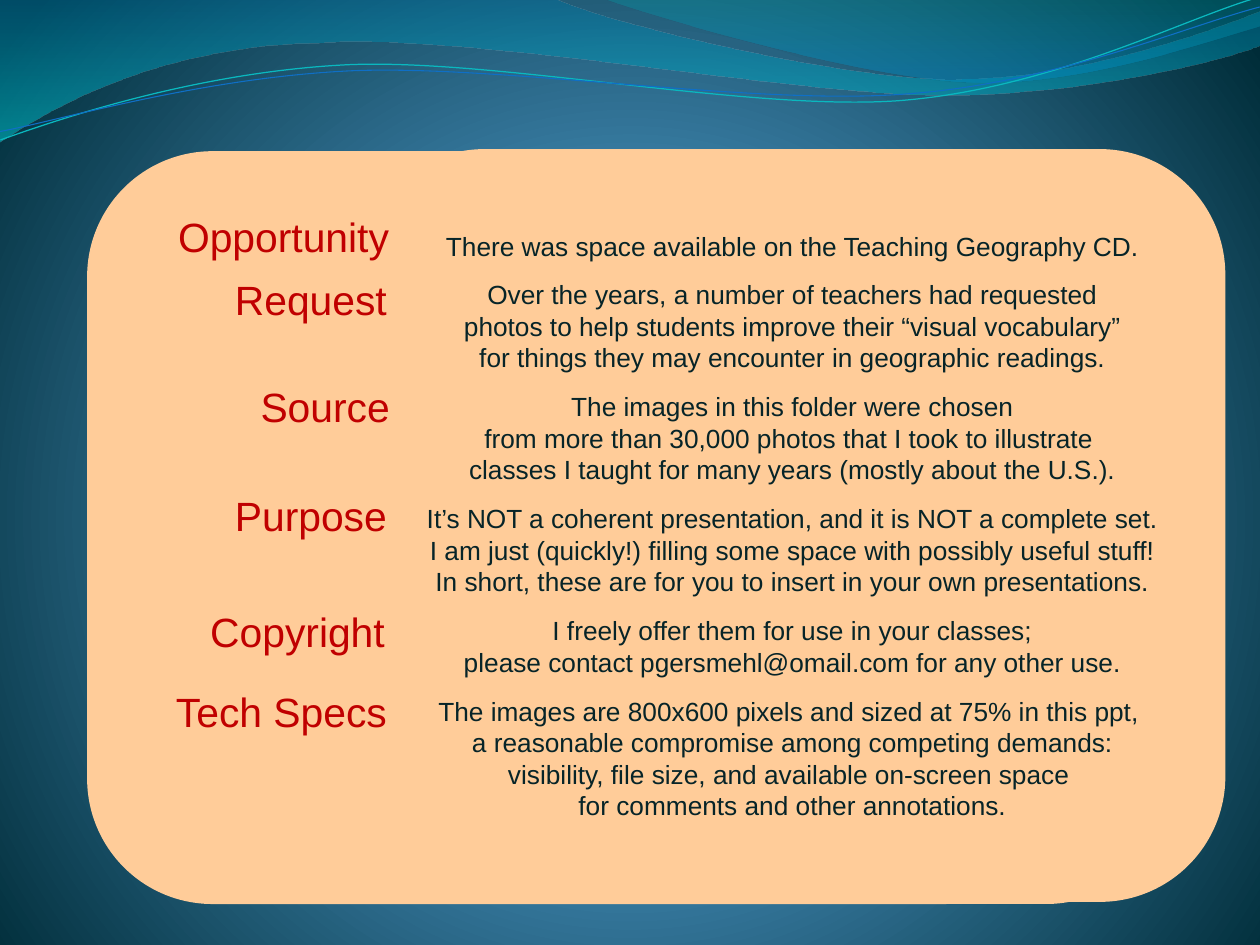
from lxml.etree import SubElement
from pptx import Presentation
from pptx.dml.color import RGBColor
from pptx.enum.shapes import MSO_SHAPE
from pptx.enum.text import MSO_ANCHOR, PP_ALIGN
from pptx.oxml import parse_xml
from pptx.oxml.ns import nsdecls, qn
from pptx.util import Inches, Pt

# The slide is a grid of 12 columns by 9 rows
COLUMNS, ROWS = 12, 9
WIDTH, HEIGHT = Inches(12), Inches(9)
COLUMN, ROW = WIDTH / COLUMNS, HEIGHT / ROWS

PEACH, RED, INK = "FFCC99", "C00000", "072428"

# Each list: a first point, then three points for every joined cubic curve
UPPER_EDGE = [(5.28, -0.01), (5.71, 0.2), (7.96, 0.76), (9.1, 0.76),
              (10.24, 0.76), (11.5, 0.31), (12, 0.11)]
LOWER_EDGE = [(12.01, 0.43), (11.8, 0.53), (10.44, 0.91), (8.95, 0.91),
              (7.46, 0.9), (4.58, 0.33), (3.09, 0.41),
              (1.55, 0.43), (0.55, 0.99), (-0.01, 1.36)]
RIGHT_EDGE = [(5.75, -0.01), (6.11, 0.13), (8.18, 0.74), (9.22, 0.78),
              (10.27, 0.83), (11.54, 0.38), (12, 0.25)]
TEAL_LINE = [(-0.02, 1.05), (0.57, 0.87), (1.9, 0.49), (3.33, 0.49),
             (4.75, 0.5), (7.09, 1.11), (8.53, 1.08),
             (9.99, 1.04), (11.28, 0.43), (12, 0.26)]
BLUE_LINE = [(-0.02, 0.97), (0.56, 0.89), (1.96, 0.54), (3.4, 0.55),
             (4.84, 0.57), (7.16, 1.06), (8.59, 1.02),
             (10.03, 0.99), (11.31, 0.5), (12.02, 0.35)]
LINE_ROTATION = 357.3

# Label, its left, top, width and height inside the panel, and its lines
SECTIONS = [
    ("Opportunity", (0.5, 0.54, 2.52, 0.53),
     ["There was space available on the Teaching Geography CD."]),
    ("Request", (0.5, 1.14, 2.5, 0.53),
     ["Over the years, a number of teachers had requested",
      "photos to help students improve their “visual vocabulary”",
      "for things they may encounter in geographic readings."]),
    ("Source", (0.96, 2.14, 2.07, 0.58),
     ["The images in this folder were chosen",
      "from more than 30,000 photos that I took to illustrate ",
      "classes I taught for many years (mostly about the U.S.)."]),
    ("Purpose", (0.5, 3.2, 2.5, 0.53),
     ["It’s NOT a coherent presentation, and it is NOT a complete set.",
      "I am just (quickly!) filling some space with possibly useful stuff!",
      "In short, these are for you to insert in your own presentations."]),
    ("Copyright", (0.71, 4.31, 2.27, 0.53),
     ["I freely offer them for use in your classes;",
      "please contact pgersmehl@omail.com for any other use."]),
    ("Tech Specs", (0.5, 5.07, 2.5, 0.53),
     ["The images are 800x600 pixels and sized at 75% in this ppt, ",
      "a reasonable compromise among competing demands:",
      "visibility, file size, and available on-screen space ",
      "for comments and other annotations."]),
]


def color(value):
    return RGBColor.from_string(value)


def set_gradient(fill, owner, stops, direction):
    """Fill with stops of (percent, colour, opacity percent)."""
    fill.background()
    gradient = parse_xml(f'<a:gradFill {nsdecls("a")} rotWithShape="1"><a:gsLst/>'
                         f'{direction}</a:gradFill>')
    for position, value, opacity in stops:
        stop = SubElement(gradient[0], qn("a:gs"), pos=str(position * 1000))
        tint = SubElement(stop, qn("a:srgbClr"), val=value)
        if opacity < 100:
            SubElement(tint, qn("a:alpha"), val=str(opacity * 1000))
    owner.replace(owner.find(qn("a:noFill")), gradient)


def straight(*points):
    return [[point] for point in points]


def curved(points):
    """A straight step to the first point, then cubic curves."""
    return [points[:1]] + [points[i:i + 3] for i in range(1, len(points), 3)]


def add_outline(slide, segments, closed):
    start, *others = [(x * COLUMN, y * ROW)
                      for segment in segments for x, y in segment]
    builder = slide.shapes.build_freeform(*start)
    builder.add_line_segments(others, close=closed)
    shape = builder.convert_to_shape()
    shape.shadow.inherit = False
    # Join the three steps of each curve into one cubic segment
    steps = iter(list(shape.element.iter(qn("a:lnTo"))))
    for segment in segments[1:]:
        first, *rest = [next(steps) for _ in segment]
        if rest:
            curve = parse_xml(f'<a:cubicBezTo {nsdecls("a")}/>')
            first.addprevious(curve)
            for step in (first, *rest):
                curve.append(step[0])
                step.getparent().remove(step)
    return shape


def add_wave(slide, segments, stops):
    wave = add_outline(slide, segments, True)
    wave.line.fill.background()
    set_gradient(wave.fill, wave.element.spPr, stops,
                 '<a:lin ang="5400000" scaled="1"/>')


def add_wave_line(slide, points, value, width):
    line = add_outline(slide, curved(points), False)
    line.rotation = LINE_ROTATION
    line.fill.background()
    line.line.color.rgb = color(value)
    line.line.width = Pt(width)


def add_backdrop(slide):
    fill = slide.background.fill
    set_gradient(fill, slide.element.find(".//" + qn("p:bgPr")),
                 [(0, "4AA0D6", 100), (25, "4C98C7", 100), (100, "002C38", 100)],
                 '<a:path path="circle"><a:fillToRect l="10000" t="110000" '
                 'r="10000" b="100000"/></a:path>')
    add_wave(slide, straight((0, -0.01)) + curved(UPPER_EDGE) + curved(LOWER_EDGE),
             [(0, "0074A1", 45), (100, "00C6CF", 55)])
    add_wave(slide, curved(RIGHT_EDGE) + straight((12, 0)),
             [(0, "00A1A9", 30), (80, "008BBF", 45)])
    add_wave_line(slide, TEAL_LINE, "0AB8BF", 0.85)
    add_wave_line(slide, BLUE_LINE, "0F6FC6", 0.75)


def add_callout(slide, left, top, width, height, sections=(), size=18,
                value=INK, alignment=PP_ALIGN.CENTER):
    shape = slide.shapes.add_shape(
        MSO_SHAPE.ROUNDED_RECTANGULAR_CALLOUT, round(left * COLUMN),
        round(top * ROW), round(width * COLUMN), round(height * ROW))
    shape.shadow.inherit = False
    for index, adjustment in enumerate((-0.21, 0.5, 1 / 6)):
        shape.adjustments[index] = adjustment
    shape.fill.solid()
    shape.fill.fore_color.rgb = color(PEACH)
    shape.line.fill.background()
    frame = shape.text_frame
    frame.word_wrap = True
    frame.vertical_anchor = MSO_ANCHOR.MIDDLE
    frame.margin_left = frame.margin_right = Inches(0.12)
    frame.margin_top = frame.margin_bottom = Inches(0.06)
    paragraph = frame.paragraphs[0]
    for section, lines in enumerate(sections):
        for index, line in enumerate(lines):
            if section or index:
                paragraph = frame.add_paragraph()
            paragraph.text = line
            paragraph.alignment = alignment
            paragraph.space_before = Pt(12 if section and not index else 0)
            paragraph.font.name = "Arial"
            paragraph.font.size = Pt(size)
            paragraph.font.color.rgb = color(value)


def add_panel(slide, left, top, width, height):
    add_callout(slide, left, top, width, height)
    # Descriptions
    add_callout(slide, left + 2.59, top - 0.02, width - 2.08, height,
                [lines for _, _, lines in SECTIONS])
    # Section labels
    for label, (x, y, label_width, label_height), _ in SECTIONS:
        add_callout(slide, left + x, top + y, label_width, label_height,
                    [[label]], 28, RED, PP_ALIGN.RIGHT)


def main():
    presentation = Presentation()
    presentation.slide_width, presentation.slide_height = WIDTH, HEIGHT
    slide = presentation.slides.add_slide(presentation.slide_layouts[6])
    add_backdrop(slide)
    add_panel(slide, 0.83, 1.44, 10.33, 7.17)
    presentation.save("out.pptx")


if __name__ == "__main__":
    main()
